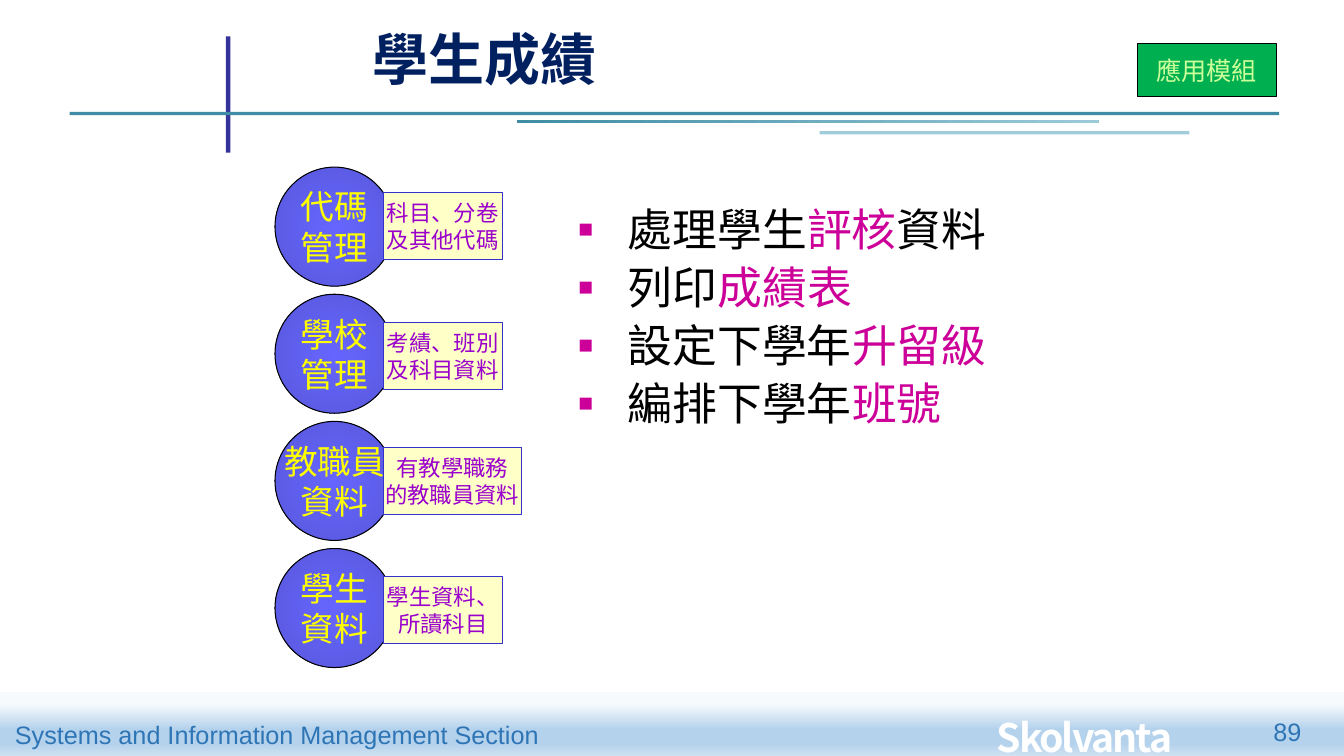
from dataclasses import dataclass

from lxml.etree import SubElement
from pptx import Presentation
from pptx.dml.color import RGBColor
from pptx.enum.shapes import MSO_SHAPE
from pptx.enum.text import MSO_ANCHOR, PP_ALIGN
from pptx.oxml.ns import qn
from pptx.util import Pt


@dataclass(frozen=True)
class Theme:
    """Colours, faces and type sizes of the slide."""
    white: str = "FFFFFF"
    black: str = "000000"
    navy: str = "002060"
    indigo: str = "333399"
    teal: str = "3F8DA5"
    sky: str = "9BCAD9"
    pale: str = "A1CDDB"
    blue: str = "2E75B6"
    pink: str = "CC0099"
    green: str = "00B050"
    lime: str = "CCFF99"
    yellow: str = "FFFF00"
    cream: str = "FFFFC8"
    edge: str = "3333CC"
    violet: str = "9900CC"
    foot: tuple = ((18, "F7FAFD"), (58, "B5D2EC"), (81, "B5D2EC"), (100, "CEE1F2"))
    orb: tuple = ((0, "6666FF"), (100, "5757DA"))
    latin: str = "Arial"
    han: str = "Noto Sans CJK SC"
    title: int = 40
    body: int = 32
    mark: int = 28
    node: int = 24
    small: int = 18
    note: int = 16


THEME = Theme()


def apply(target, values):
    """Set each named attribute on the target."""
    for name, value in values.items():
        setattr(target, name, value)


def blend(shape, stops, angle=None):
    """Fill a shape with a linear gradient, or a radial one without an angle."""
    shape.fill.gradient()
    grad = shape.element.spPr.find(qn("a:gradFill"))
    for child in list(grad):
        grad.remove(child)
    group = SubElement(grad, qn("a:gsLst"))
    for place, colour in stops:
        stop = SubElement(group, qn("a:gs"), pos=str(place * 1000))
        SubElement(stop, qn("a:srgbClr"), val=colour)
    if angle is None:
        way = SubElement(grad, qn("a:path"), path="circle")
        SubElement(way, qn("a:fillToRect"), l="50000", t="50000", r="50000", b="50000")
    else:
        SubElement(grad, qn("a:lin"), ang=str(angle * 60000), scaled="0")


def draw(slide, area, fill, line=None, kind=MSO_SHAPE.RECTANGLE, angle=None):
    """Draw a shape with a plain or gradient fill."""
    shape = slide.shapes.add_shape(kind, *map(Pt, area))
    shape.shadow.inherit = False
    if isinstance(fill, tuple):
        blend(shape, fill, angle)
    else:
        shape.fill.solid()
        shape.fill.fore_color.rgb = RGBColor.from_string(fill)
    if line:
        shape.line.color.rgb = RGBColor.from_string(line)
        shape.line.width = Pt(0.75)
    else:
        shape.line.fill.background()
    return shape


def style(run, face, size, colour, bold=False, track=0):
    """Format one run."""
    apply(run.font, {"name": face, "size": Pt(size), "bold": bold})
    run.font.color.rgb = RGBColor.from_string(colour)
    props = run.font._element
    SubElement(props, qn("a:ea"), typeface=face)
    if track:
        props.set("spc", str(track))


def write(shape, lines, face, size, colour, align=PP_ALIGN.LEFT,
          anchor=MSO_ANCHOR.TOP, wrap=False, **extra):
    """Write one paragraph per line into a shape."""
    frame = shape.text_frame
    apply(frame, {"word_wrap": wrap, "vertical_anchor": anchor})
    for index, line in enumerate(lines):
        para = frame.add_paragraph() if index else frame.paragraphs[0]
        para.alignment = align
        if face == THEME.han:
            para.line_spacing = Pt(size * 1.2)
        run = para.add_run()
        run.text = line
        style(run, face, size, colour, **extra)


def label(slide, area, text, *look, **extra):
    """Place a line of free text."""
    box = slide.shapes.add_textbox(*map(Pt, area))
    write(box, [text], *look, **extra)


def node(slide, area, lines, fill, line, size, colour, kind=MSO_SHAPE.RECTANGLE):
    """Draw an outlined shape with centred text."""
    shape = draw(slide, area, fill, line, kind)
    write(shape, lines, THEME.han, size, colour, PP_ALIGN.CENTER, MSO_ANCHOR.MIDDLE)


def points(slide, area, items):
    """List square-bulleted items whose odd parts are highlighted."""
    frame = draw(slide, area, THEME.white).text_frame
    apply(frame, {"word_wrap": True, "vertical_anchor": MSO_ANCHOR.TOP,
                  "margin_top": Pt(6.6)})
    for index, parts in enumerate(items):
        para = frame.add_paragraph() if index else frame.paragraphs[0]
        apply(para, {"level": 1, "alignment": PP_ALIGN.LEFT,
                     "line_spacing": Pt(THEME.body * 1.2),
                     "space_before": Pt(3 if index else 0)})
        props = para._p.get_or_add_pPr()
        props.set("marL", str(Pt(35.3)))
        props.set("indent", str(-Pt(35.3)))
        tint = SubElement(props, qn("a:buClr"))
        SubElement(tint, qn("a:srgbClr"), val=THEME.pink)
        SubElement(props, qn("a:buSzPct"), val="55000")
        SubElement(props, qn("a:buFont"), typeface=THEME.latin)
        SubElement(props, qn("a:buChar"), char="■")
        for spot, part in enumerate(parts):
            run = para.add_run()
            run.text = part
            style(run, THEME.han, THEME.body, THEME.pink if spot % 2 else THEME.black)


def frame(slide):
    """Draw the rules, footer and page number."""
    draw(slide, (0, 494.6, 960, 45.4), THEME.foot, angle=90)
    draw(slide, (161.3, 26, 3.4, 83), THEME.indigo)
    draw(slide, (49.7, 79.9, 864, 2.4), THEME.teal)
    draw(slide, (369.4, 85.7, 415.4, 2.4), ((0, THEME.teal), (100, THEME.sky)), angle=0)
    draw(slide, (585.4, 93.6, 264.2, 2.4), THEME.pale)
    label(slide, (3.6, 510.5, 392.4, 28.8), "Systems and Information Management Section",
          THEME.latin, THEME.small, THEME.blue)
    label(slide, (704.9, 506, 196.6, 41), "Skolvanta", THEME.han, THEME.mark,
          THEME.white, wrap=True, bold=True, track=-150)
    label(slide, (842.4, 508.3, 94.3, 36), "89", THEME.latin, THEME.small, THEME.blue,
          align=PP_ALIGN.RIGHT, wrap=True)


def main():
    """Build the slide and save it."""
    deck = Presentation()
    apply(deck, {"slide_width": Pt(960), "slide_height": Pt(540)})
    slide = deck.slides.add_slide(deck.slide_layouts[6])
    frame(slide)
    label(slide, (259.2, 9.4, 195.8, 59.8), "學生成績", THEME.latin, THEME.title,
          THEME.navy, anchor=MSO_ANCHOR.BOTTOM, wrap=True, bold=True)
    points(slide, (406, 137.5, 375.8, 170), [
        ("處理學生", "評核", "資料"),
        ("列印", "成績表"),
        ("設定下學年", "升留級"),
        ("編排下學年", "班號"),
    ])
    node(slide, (812.2, 31, 99.4, 38.2), ["應用模組"], THEME.green, THEME.black,
         THEME.small, THEME.lime)
    rows = [
        (("代碼", "管理"), ("科目、分卷", "及其他代碼"), 137.5, 85),
        (("學校", "管理"), ("考績、班別", "及科目資料"), 230.4, 85),
        (("教職員", "資料"), ("有教學職務", "的教職員資料"), 319.7, 98.6),
        (("學生", "資料"), ("學生資料、", "所讀科目"), 411.8, 85),
    ]
    for index, (name, note, top, width) in enumerate(rows):
        node(slide, (196.4, 119.4 + 90.8 * index, 85, 85), name, THEME.orb, THEME.black,
             THEME.node, THEME.yellow, MSO_SHAPE.OVAL)
        node(slide, (273.8, top, width, 48.2), note, THEME.cream, THEME.edge,
             THEME.note, THEME.violet)
    deck.save("out.pptx")


if __name__ == "__main__":
    main()
